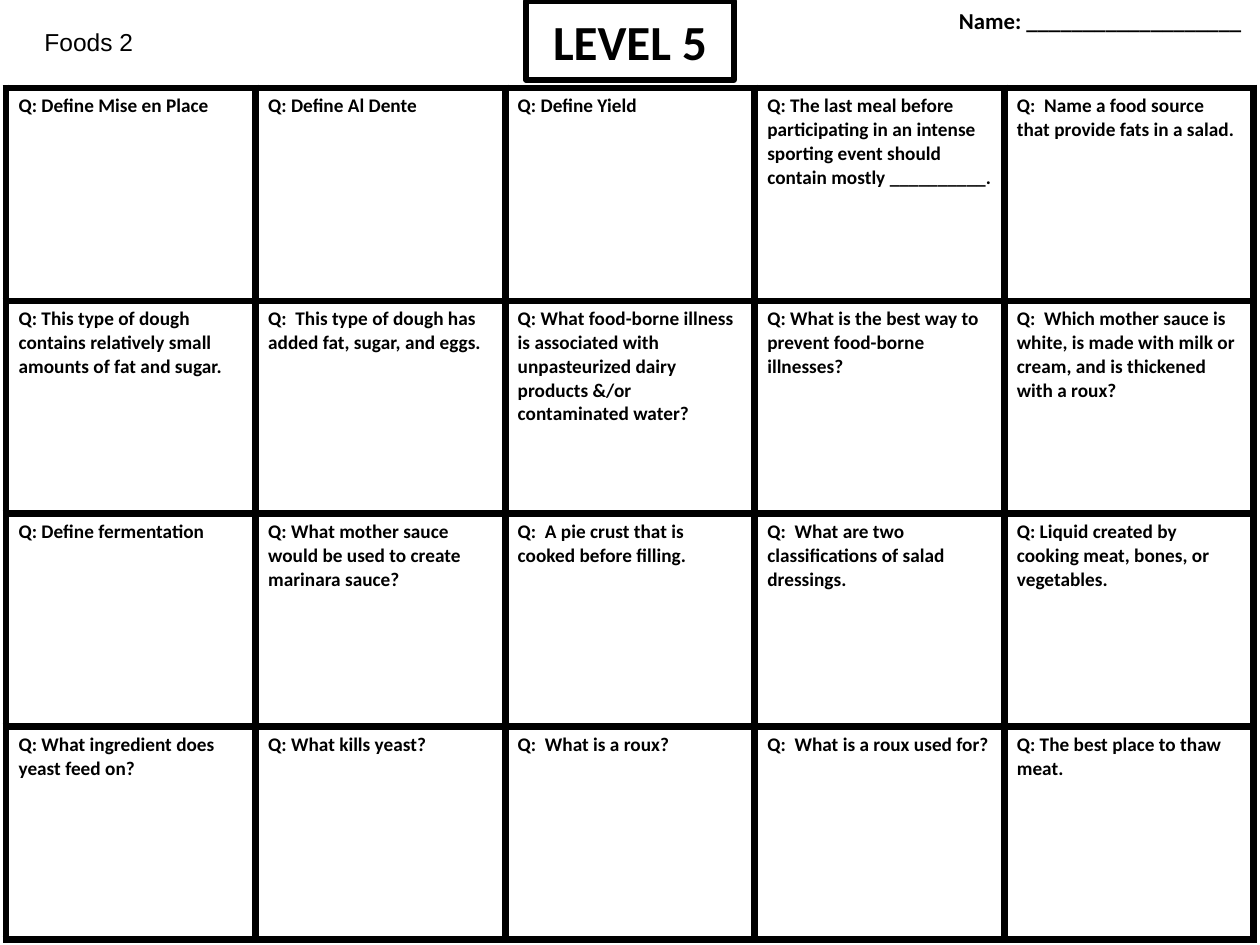
from lxml import etree
from pptx import Presentation
from pptx.dml.color import RGBColor
from pptx.enum.text import MSO_ANCHOR, MSO_AUTO_SIZE, PP_ALIGN
from pptx.oxml.ns import qn
from pptx.util import Emu, Pt

BLACK = RGBColor(0, 0, 0)
WHITE = RGBColor(255, 255, 255)
LEFT, CENTER = PP_ALIGN.LEFT, PP_ALIGN.CENTER
TOP, MIDDLE = MSO_ANCHOR.TOP, MSO_ANCHOR.MIDDLE
FIXED = MSO_AUTO_SIZE.NONE
PX_PER_INCH = 126

QUESTIONS = [
    ["Q: Define Mise en Place",
     "Q: Define Al Dente",
     "Q: Define Yield",
     "Q: The last meal before participating in an intense sporting event "
     "should contain mostly __________.",
     "Q:  Name a food source that provide fats in a salad."],
    ["Q: This type of dough contains relatively small amounts of fat and sugar.",
     "Q:  This type of dough has added fat, sugar, and eggs.",
     "Q: What food-borne illness is associated with unpasteurized dairy "
     "products &/or contaminated water?",
     "Q: What is the best way to prevent food-borne illnesses?",
     "Q:  Which mother sauce is white, is made with milk or cream, and is "
     "thickened with a roux?"],
    ["Q: Define fermentation",
     "Q: What mother sauce would be used to create marinara sauce?",
     "Q:  A pie crust that is cooked before filling.",
     "Q:  What are two classifications of salad dressings.",
     "Q: Liquid created by cooking meat, bones, or vegetables."],
    ["Q: What ingredient does yeast feed on?",
     "Q: What kills yeast?",
     "Q:  What is a roux?",
     "Q:  What is a roux used for?",
     "Q: The best place to thaw meat."],
]


def px(length):
    return Emu(round(length * 914400 / PX_PER_INCH))


def write(frame, text, size=11, font="Calibri", bold=True, align=LEFT,
          anchor=TOP, before=0):
    """Put one formatted paragraph into a text frame."""
    frame.word_wrap = True
    frame.vertical_anchor = anchor
    para = frame.paragraphs[0]
    para.alignment = align
    para.space_before = Pt(before)
    span = para.add_run()
    span.text = text
    span.font.size = Pt(size)
    span.font.name = font
    span.font.bold = bold
    span.font.color.rgb = BLACK


def add_borders(cell, width):
    """Draw a solid black line on all four sides of a table cell."""
    properties = cell._tc.get_or_add_tcPr()
    for index, side in enumerate(("a:lnL", "a:lnR", "a:lnT", "a:lnB")):
        line = etree.Element(qn(side), w=str(Pt(width)))
        fill = etree.SubElement(line, qn("a:solidFill"))
        etree.SubElement(fill, qn("a:srgbClr"), val=str(BLACK))
        properties.insert(index, line)


class Worksheet:
    def __init__(self, deck):
        self.page = deck.slides.add_slide(deck.slide_layouts[0])

    def place(self, box, left, top, width, height):
        box.left, box.top = px(left), px(top)
        box.width, box.height = px(width), px(height)

    def placeholder(self, index, area, text, outline=None, **style):
        box = self.page.placeholders[index]
        self.place(box, *area)
        box.text_frame.auto_size = FIXED
        if outline:
            box.line.color.rgb = BLACK
            box.line.width = Pt(outline)
        write(box.text_frame, text, **style)

    def label(self, area, text, **style):
        box = self.page.shapes.add_textbox(*map(px, area))
        write(box.text_frame, text, **style)

    def grid(self, area, rows, border):
        frame = self.page.shapes.add_table(
            len(rows), len(rows[0]), *map(px, area))
        table = frame.table
        table.first_row = table.horz_banding = False
        for row, texts in enumerate(rows):
            for column, text in enumerate(texts):
                cell = table.cell(row, column)
                cell.fill.solid()
                cell.fill.fore_color.rgb = WHITE
                write(cell.text_frame, text)
                add_borders(cell, border)


def main():
    deck = Presentation()
    deck.slide_width, deck.slide_height = px(1260), px(945)
    sheet = Worksheet(deck)

    # Header: course, level and name line
    sheet.label((32, 21, 210, 43), "Foods 2", size=14, font="Arial", bold=False)
    sheet.placeholder(0, (526, 1, 208, 79), "LEVEL 5", outline=3,
                      size=28, align=CENTER, anchor=MIDDLE)
    sheet.placeholder(1, (940, 0, 320, 45), "Name: " + "_" * 19,
                      size=13, align=CENTER, before=2.6)

    # Question grid
    sheet.grid((6, 88, 1248, 852), QUESTIONS, border=4.5)

    deck.save("out.pptx")


if __name__ == "__main__":
    main()
